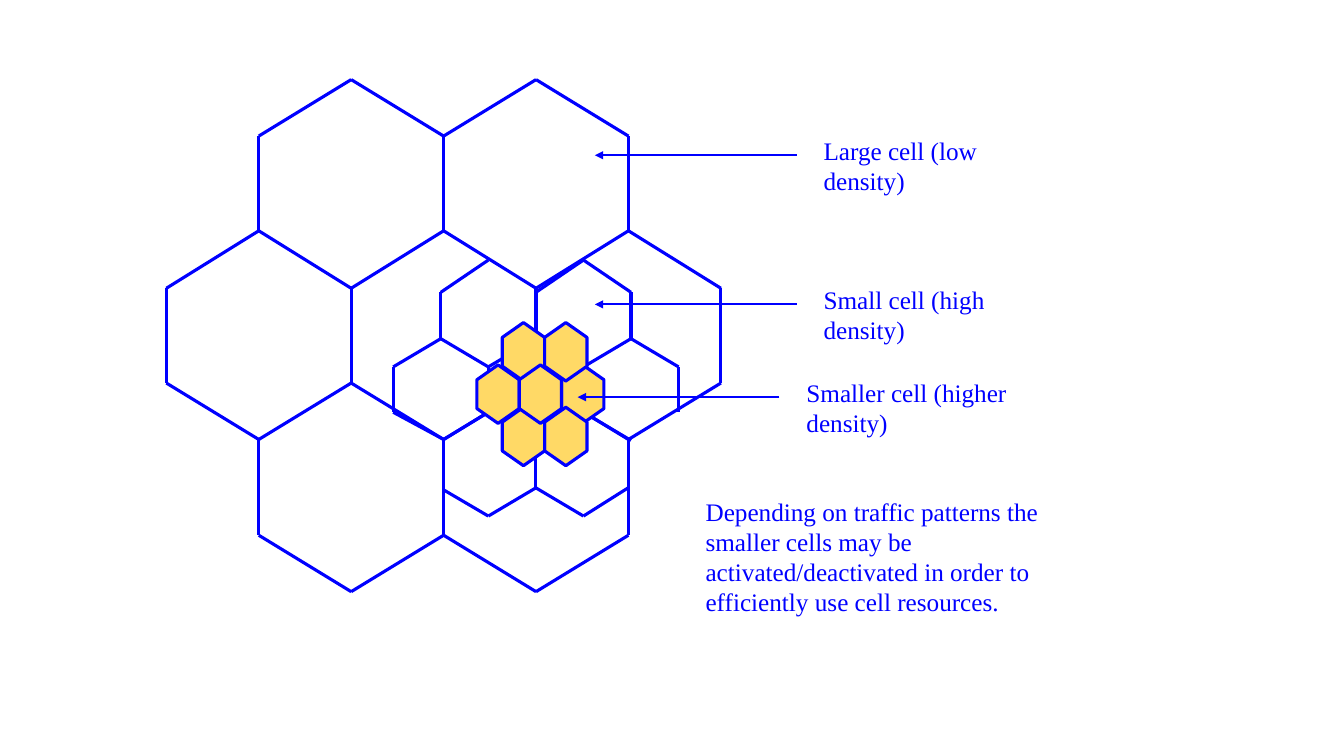
"""Build a slide showing hexagonal cells split into smaller cells by traffic density."""
from lxml import etree
from pptx import Presentation
from pptx import util as u
from pptx.dml.color import RGBColor
from pptx.enum import shapes, text
from pptx.oxml.ns import qn

BLUE = "0000FF"
YELLOW = "FFD966"
WHITE = "FFFFFF"

presentation = Presentation()
presentation.slide_width = u.Inches(13.33)
presentation.slide_height = u.Inches(7.5)
slide = presentation.slides.add_slide(presentation.slide_layouts[6])


def add_line(start, end, width=2.25, arrow=False):
    points = [u.Inches(value) for value in (*start, *end)]
    connector = slide.shapes.add_connector(shapes.MSO_CONNECTOR.STRAIGHT, *points)
    connector.line.color.rgb = RGBColor.from_string(BLUE)
    connector.line.width = u.Pt(width)
    properties = connector.element.spPr
    if arrow:
        etree.SubElement(properties.find(qn("a:ln")), qn("a:tailEnd"), type="triangle")
    etree.SubElement(properties, qn("a:effectLst"))


def add_label(content, left, top, width, height, size=18, color=BLUE, font="Times New Roman"):
    box = slide.shapes.add_textbox(*(u.Inches(value) for value in (left, top, width, height)))
    frame = box.text_frame
    frame.word_wrap = True
    frame.auto_size = text.MSO_AUTO_SIZE.SHAPE_TO_FIT_TEXT
    run = frame.paragraphs[0].add_run()
    run.text = content
    run.font.size = u.Pt(size)
    run.font.name = font
    run.font.color.rgb = RGBColor.from_string(color)


cells = [(2, 0), (4, 0), (1, 2), (3, 2), (5, 2), (2, 4), (4, 4)]
corners = [(0, 0), (1, 1), (1, 2), (0, 3), (-1, 2), (-1, 1)]
edges = set()
for column, level in cells:
    vertices = [(column + across, level + down) for across, down in corners]
    for first, second in zip(vertices, vertices[1:] + vertices[:1]):
        edges.add(tuple(sorted((first, second))))

large_levels = [0.79, 1.35, 2.29, 2.86, 3.8, 4.36, 5.31, 5.87]
small_levels = [2.58, 2.9, 3.36, 3.64, 4.09, 4.37, 4.84, 5.12]
snapped_vertices = {(1, 5): (4.4, 4.36), (1, 6): (4.4, 4.86), (5, 6): (6.23, 4.84)}
hidden_edges = {((2, 0), (3, 1)), ((5, 5), (6, 4)), ((5, 5), (5, 6))}

for edge in sorted(edges):
    add_line(*((1.65 + 5.5 / 6 * column, large_levels[level]) for column, level in edge))
add_line((7.9, 1.54), (5.9, 1.54), width=1.5, arrow=True)
add_label("Large cell (low density)", 8.07, 1.29, 2.17, 0.71)

for edge in sorted(edges - hidden_edges):
    add_line(*(snapped_vertices.get((column, level), (3.9 + 2.83 / 6 * column, small_levels[level]))
               for column, level in edge))
add_line((7.9, 3.02), (5.9, 3.02), width=1.5, arrow=True)
add_label("Small cell (high density)", 8.07, 2.77, 2.17, 0.71)

center_x, center_y, pitch, cell_height = 5.36, 3.91, 0.42, 0.58
smaller_cells = [(0.1, 0, 0.5, 0.29, WHITE)]
for across, down in [(1, 0), (0.6, 1), (-1, 0), (-0.4, 1), (-0.4, -1), (0.6, -1), (0, 0)]:
    smaller_cells.append((across, down, pitch, 0.35, YELLOW))
for across, down, cell_width, slant, fill in smaller_cells:
    left = center_x + across * pitch - cell_height / 2
    top = center_y + down * pitch - cell_width / 2
    shape = slide.shapes.add_shape(
        shapes.MSO_SHAPE.HEXAGON, u.Inches(left), u.Inches(top),
        u.Inches(cell_height), u.Inches(cell_width))
    shape.rotation = 270
    shape.adjustments[0] = slant
    shape.shadow.inherit = False
    shape.fill.solid()
    shape.fill.fore_color.rgb = RGBColor.from_string(fill)
    shape.line.color.rgb = RGBColor.from_string(BLUE)
    shape.line.width = u.Pt(2.25)
add_line((7.73, 3.94), (5.73, 3.94), width=1.5, arrow=True)
add_label("Smaller cell (higher density)", 7.9, 3.69, 2.58, 0.71)

add_label("Depending on traffic patterns the smaller cells may be activated/deactivated "
          "in order to efficiently use cell resources.", 6.9, 4.87, 4, 1.31)

presentation.save("out.pptx")
